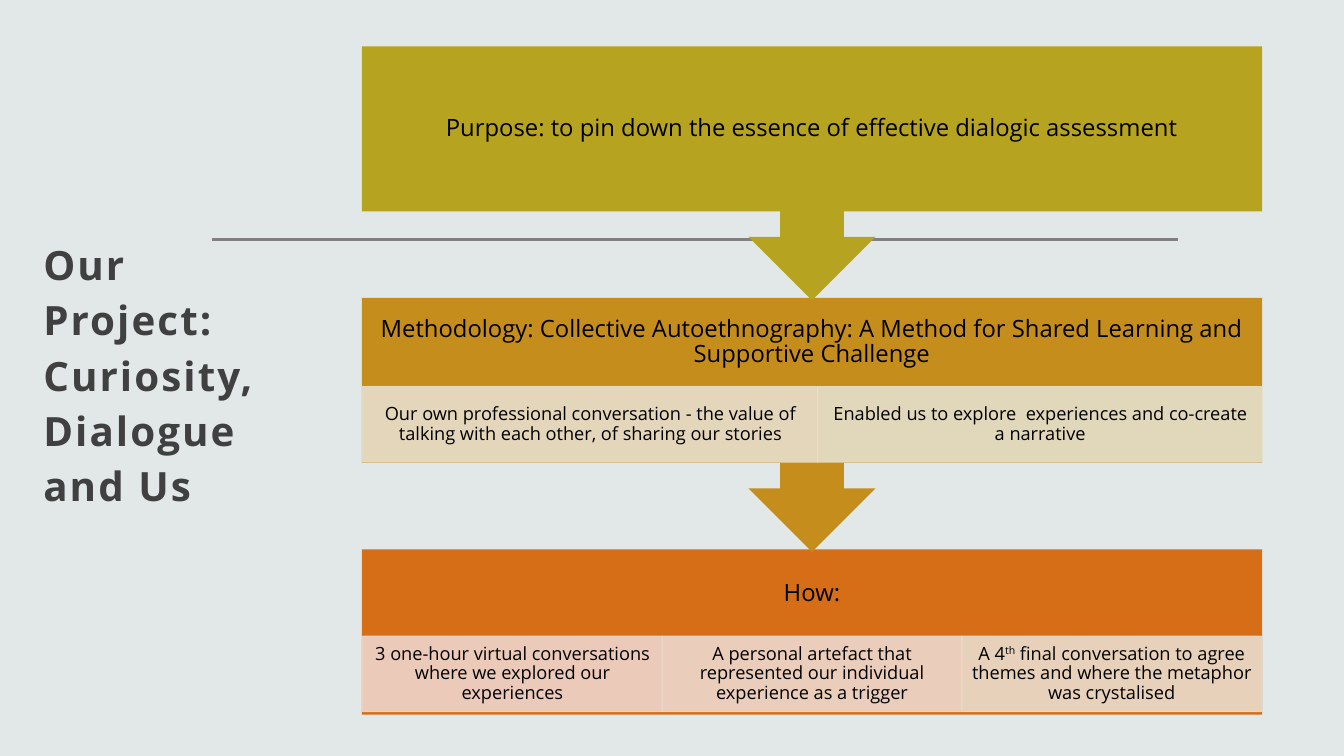
from pptx import Presentation
from pptx.dml.color import RGBColor
from pptx.enum import shapes, text
from pptx.oxml import parse_xml
from pptx.oxml.ns import nsdecls
from pptx.util import Pt

# Content: carets enclose superscript; cells hold (text, colour, width)
TITLE = "Our Project: Curiosity, Dialogue and Us"
BANDS = [
    {"head": "Purpose: to pin down the essence of effective dialogic assessment",
     "fill": "B6A320", "deep": 118, "cells": []},
    {"head": "Methodology: Collective Autoethnography: A Method for Shared "
             "Learning and Supportive Challenge",
     "fill": "C58D1C", "deep": 63.4, "cells": [
         ("Our own professional conversation - the value of talking with each "
          "other, of sharing our stories", "E8DECD", 325.1),
         ("Enabled us to explore  experiences and co-create a narrative",
          "E5E0CD", 317.7)]},
    {"head": "How:", "fill": "D56E17", "deep": 63.4, "cells": [
        ("3 one-hour virtual conversations where we explored our experiences",
         "EFD5CC", 214),
        ("A personal artefact that represented our individual experience as a trigger",
         "EDD8CC", 214),
        ("A 4^th^ final conversation to agree themes and where the metaphor "
         "was crystalised", "EBDCCC", 214)]},
]
LEFT, TOP, WIDE, STEP = 258.5, 33.1, 643, 179.65
BOX, CALL, CELL = 118, 181.5, 54
FONT = "Open Sans"


def hue(code):
    return RGBColor.from_string(code)


def write(shape, words, size, pad, color="000000"):
    """Fill a shape with one centred paragraph; return the paragraph."""
    frame = shape.text_frame
    frame.word_wrap = True
    frame.vertical_anchor = text.MSO_ANCHOR.MIDDLE
    frame.margin_left = frame.margin_right = Pt(pad[0])
    frame.margin_top = frame.margin_bottom = Pt(pad[1])
    para = frame.paragraphs[0]
    para.alignment = text.PP_ALIGN.CENTER
    para.line_spacing = 0.9
    for i, part in enumerate(words.split("^")):
        run = para.add_run()
        run.text = part
        run.font.name, run.font.size = FONT, Pt(size)
        run.font.color.rgb = hue(color)
        if i % 2:
            run._r.get_or_add_rPr().set("baseline", "30000")
    return para


def block(kind, x, y, w, h, fill):
    shape = slide.shapes.add_shape(kind, Pt(x), Pt(y), Pt(w), Pt(h))
    shape.shadow.inherit = False
    shape.fill.solid()
    shape.fill.fore_color.rgb = hue(fill)
    shape.line.fill.background()
    return shape


def label(x, y, w, h):
    return slide.shapes.add_textbox(Pt(x), Pt(y), Pt(w), Pt(h))


def fade(shape):
    """Make fill and line 90% opaque."""
    for color in shape._element.spPr.iter("{*}srgbClr"):
        color.append(parse_xml(f'<a:alpha {nsdecls("a")} val="90000"/>'))


deck = Presentation()
deck.slide_width, deck.slide_height = Pt(960), Pt(540)
slide = deck.slides.add_slide(deck.slide_layouts[6])
slide.background.fill.solid()
slide.background.fill.fore_color.rgb = hue("E2E8E8")

# Rule behind the bands
rule = slide.shapes.add_connector(shapes.MSO_CONNECTOR.STRAIGHT,
                                  Pt(151.2), Pt(171), Pt(841.7), Pt(171))
rule.line.color.rgb = hue("808080")
rule.line.width = Pt(2)
rule._element.spPr.append(parse_xml(f'<a:effectLst {nsdecls("a")}/>'))

# Title
title = label(22.3, 167, 198.7, 225)
para = write(title, TITLE, 28.8, (8.64, 0), "404040")
title.text_frame.vertical_anchor = text.MSO_ANCHOR.TOP
para.alignment = text.PP_ALIGN.LEFT
para.line_spacing = 1.14
for run in para.runs:
    run.font.bold = True
    run._r.get_or_add_rPr().set("spc", "150")

# Bands, lowest first so that each arrow lies over the next band
for i, band in reversed(list(enumerate(BANDS))):
    y = TOP + i * STEP
    if i == len(BANDS) - 1:
        block(shapes.MSO_SHAPE.RECTANGLE, LEFT, y, WIDE, BOX, band["fill"])
    else:
        arrow = block(shapes.MSO_SHAPE.UP_ARROW_CALLOUT,
                      LEFT, y, WIDE, CALL, band["fill"])
        arrow.rotation = 180
    write(label(LEFT, y, WIDE, band["deep"]), band["head"], 17, (9.4, 9.4))

    x = LEFT + 0.5
    y += BOX - CELL - 2 if i == len(BANDS) - 1 else band["deep"]
    for words, fill, wide in band["cells"]:
        cell = block(shapes.MSO_SHAPE.RECTANGLE, x, y, wide, CELL, fill)
        cell.line.color.rgb = hue(fill)
        cell.line.width = Pt(0.75)
        fade(cell)
        write(cell, words, 13, (7.2, 1.44))
        x += wide

deck.save("out.pptx")
